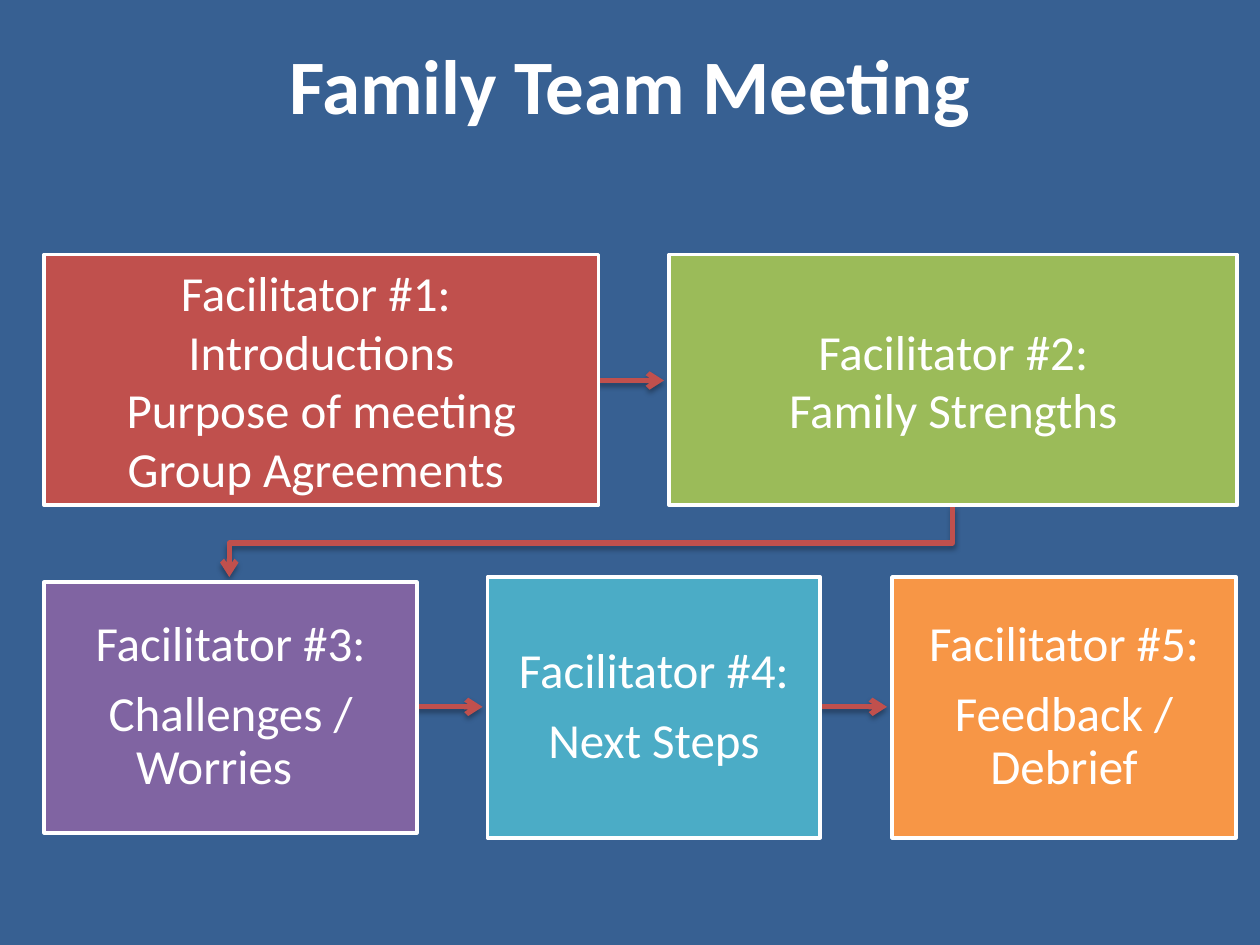
from lxml import etree
from pptx import Presentation, util as u
from pptx.dml import color
from pptx.enum import shapes, text
from pptx.oxml import ns

prs = Presentation()
prs.slide_width, prs.slide_height = u.Inches(10), u.Inches(7.5)
COL, ROW = prs.slide_width / 100, prs.slide_height / 75
s = prs.slides.add_slide(prs.slide_layouts[6])


def rgb(hex_value):
    return color.RGBColor.from_string(hex_value)


def write(tf, lines, font, para, inset):
    frame = {"word_wrap": True, "vertical_anchor": text.MSO_ANCHOR.MIDDLE}
    frame.update({f"margin_{side}": u.Inches(inset) for side in ("left", "top", "right", "bottom")})
    for k, v in frame.items():
        setattr(tf, k, v)
    for i, line in enumerate(lines):
        p = tf.add_paragraph() if i else tf.paragraphs[0]
        for k, v in {"alignment": text.PP_ALIGN.CENTER, **para}.items():
            setattr(p, k, v)
        r = p.add_run()
        r.text = line
        for k, v in {"name": "Calibri", **font}.items():
            setattr(r.font, k, v)
        r.font.color.rgb = rgb("FFFFFF")


s.background.fill.solid()
s.background.fill.fore_color.rgb = rgb("376092")

sp = s.shapes.add_textbox(0, int(0.8 * ROW), prs.slide_width, int(11.7 * ROW))
write(sp.text_frame, ["Family Team Meeting"], {"size": u.Pt(44), "bold": True}, {}, 0.1)

arrows = []
for x, y in [(47.4, 30.2), (33, 56.1), (65.1, 56.1)]:
    arrows.append(s.shapes.add_connector(
        shapes.MSO_CONNECTOR.STRAIGHT,
        int(x * COL), int(y * ROW), int((x + 5.3) * COL), int(y * ROW)))

fb = s.shapes.build_freeform(int(75.6 * COL), int(40.1 * ROW))
turns = [(75.6, 43.1), (18.2, 43.1), (18.2, 45.8)]
fb.add_line_segments([(int(x * COL), int(y * ROW)) for x, y in turns], close=False)
elbow = fb.convert_to_shape()
elbow.fill.background()
arrows.append(elbow)

for sp in arrows:
    sp.line.color.rgb = rgb("C0504D")
    sp.line.width = u.Pt(3)
    etree.SubElement(sp.line._get_or_add_ln(), ns.qn("a:tailEnd"), type="arrow")
    effects = etree.SubElement(sp._element.spPr, ns.qn("a:effectLst"))
    shadow = etree.SubElement(effects, ns.qn("a:outerShdw"), blurRad=str(u.Pt(3.1)),
                              dist=str(u.Pt(1.8)), dir="5400000", rotWithShape="0")
    black = etree.SubElement(shadow, ns.qn("a:srgbClr"), val="000000")
    etree.SubElement(black, ns.qn("a:alpha"), val="35000")

tight = {"line_spacing": 0.9, "space_after": u.Pt(9.8)}
boxes = [
    (3.5, 20.2, 44, 19.9, "C0504D", {},
     ["Facilitator #1: ", "Introductions", "Purpose of meeting", "Group Agreements "]),
    (53.1, 20.2, 45.1, 19.9, "9BBB59", {}, ["Facilitator #2:", "Family Strengths"]),
    (3.5, 46.2, 29.6, 19.9, "8064A2", tight, ["Facilitator #3:", "Challenges / Worries\t"]),
    (38.7, 45.8, 26.4, 20.7, "4BACC6", tight, ["Facilitator #4:", "Next Steps"]),
    (70.8, 45.8, 27.3, 20.7, "F79646", tight, ["Facilitator #5:", "Feedback / Debrief"]),
]
for x, y, w, h, fill, para, lines in boxes:
    sp = s.shapes.add_shape(shapes.MSO_SHAPE.RECTANGLE,
                            int(x * COL), int(y * ROW), int(w * COL), int(h * ROW))
    sp.shadow.inherit = False
    sp.fill.solid()
    sp.fill.fore_color.rgb = rgb(fill)
    sp.line.color.rgb = rgb("FFFFFF")
    sp.line.width = u.Pt(2)
    write(sp.text_frame, lines, {"size": u.Pt(28)}, para, 0.22)

prs.save("out.pptx")
